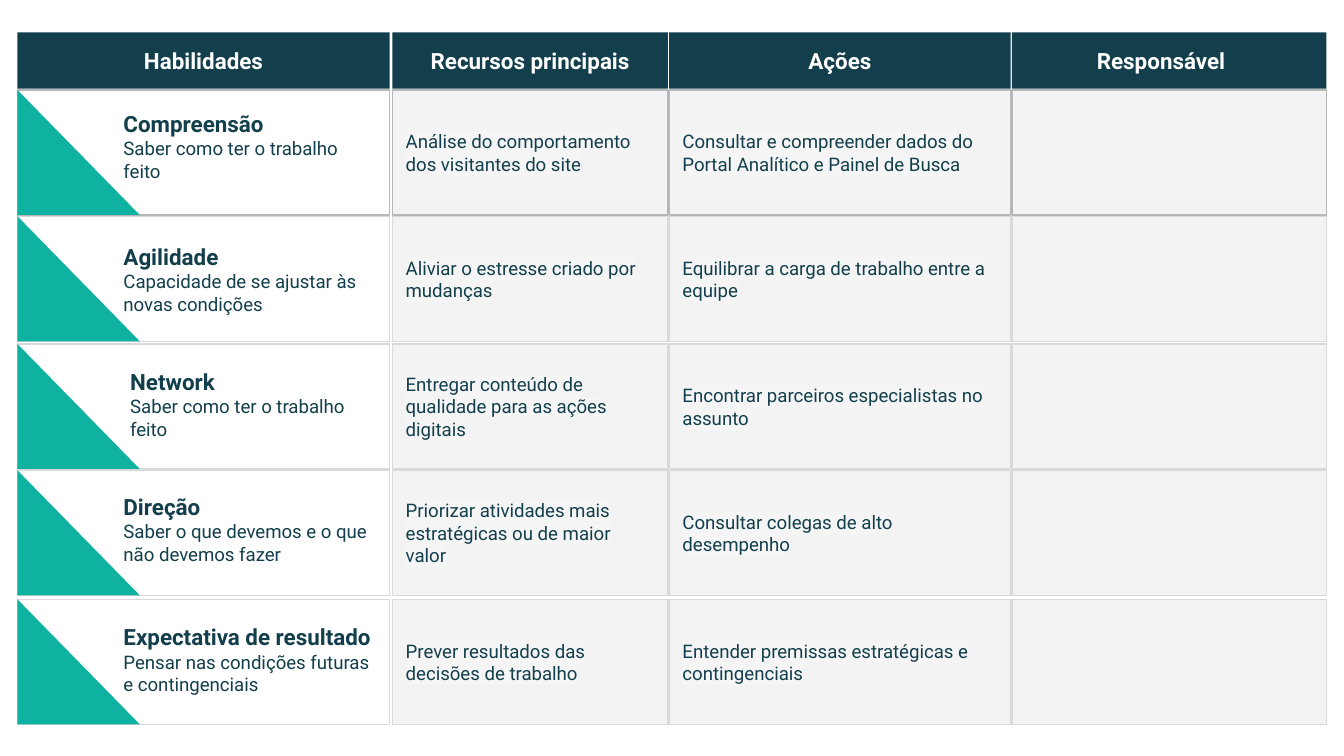
"""Build a skills matrix slide with resources, actions and owners."""
import pptx
import pptx.dml.color
import pptx.enum.shapes
import pptx.enum.text
import pptx.oxml.ns
import pptx.util
from lxml import etree

Inches = pptx.util.Inches
RGBColor = pptx.dml.color.RGBColor
SHAPES = pptx.enum.shapes.MSO_SHAPE
ALIGN = pptx.enum.text.PP_ALIGN
ANCHOR = pptx.enum.text.MSO_ANCHOR

COLORS = {"navy": "133F4C", "teal": "0FB1A0", "white": "FFFFFF", "cell": "F3F3F3",
          "highlight": "F5F5F5", "dark_line": "B7B7B7", "light_line": "D9D9D9"}
FORMATS = {
    "header": {"name": "Roboto", "size": pptx.util.Pt(12), "bold": True},
    "skill": {"name": "Roboto", "size": pptx.util.Pt(12), "bold": True},
    "body": {"name": "Roboto", "size": pptx.util.Pt(10), "bold": False},
}
FRAME = {"word_wrap": True, "margin_left": Inches(0.1), "margin_right": Inches(0.1),
         "margin_top": Inches(0.1), "margin_bottom": Inches(0.1)}
COLUMNS = [("Habilidades", 0.13, 2.77), ("Recursos principais", 2.92, 2.05),
           ("Ações", 4.98, 2.54), ("Responsável", 7.53, 2.34)]
ROW_HEIGHT = 0.93
ROWS = [
    (0.67, "dark_line", 0.82, 0.72, "Compreensão", "Saber como ter o trabalho feito",
     "Análise do comportamento dos visitantes do site",
     "Consultar e compreender dados do Portal Analítico e Painel de Busca"),
    (1.61, "light_line", 0.82, 1.71, "Agilidade", "Capacidade de se ajustar às novas condições",
     "Aliviar o estresse criado por mudanças",
     "Equilibrar a carga de trabalho entre a equipe"),
    (2.56, "light_line", 0.87, 2.64, "Network", "Saber como ter o trabalho feito",
     "Entregar conteúdo de qualidade para as ações digitais",
     "Encontrar parceiros especialistas no assunto"),
    (3.5, "light_line", 0.82, 3.57, "Direção", "Saber o que devemos e o que não devemos fazer",
     "Priorizar atividades mais estratégicas ou de maior valor",
     "Consultar colegas de alto desempenho"),
    (4.46, "light_line", 0.82, 4.54, "Expectativa de resultado",
     "Pensar nas condições futuras e contingenciais",
     "Prever resultados das decisões de trabalho",
     "Entender premissas estratégicas e contingenciais"),
]

presentation = pptx.Presentation()
presentation.slide_width = Inches(10)
presentation.slide_height = Inches(10) * 9 // 16
slide = presentation.slides.add_slide(presentation.slide_layouts[6])


def add_block(kind, left, top, width, height, fill, line=None):
    shape = slide.shapes.add_shape(kind, Inches(left), Inches(top), Inches(width), Inches(height))
    shape.shadow.inherit = False
    shape.fill.solid()
    shape.fill.fore_color.rgb = RGBColor.from_string(COLORS[fill])
    if line:
        shape.line.color.rgb = RGBColor.from_string(COLORS[line])
        shape.line.width = pptx.util.Pt(0.75)
    else:
        shape.line.fill.background()
    return shape


def write_text(shape, lines, color, align, anchor):
    frame = shape.text_frame
    for name, value in FRAME.items():
        setattr(frame, name, value)
    frame.vertical_anchor = anchor
    for index, (text, style) in enumerate(lines):
        paragraph = frame.add_paragraph() if index else frame.paragraphs[0]
        paragraph.alignment = align
        run = paragraph.add_run()
        run.text = text
        for name, value in FORMATS[style].items():
            setattr(run.font, name, value)
        run.font.color.rgb = RGBColor.from_string(COLORS[color])
    return run


for title, left, width in COLUMNS:
    header = add_block(SHAPES.RECTANGLE, left, 0.24, width, 0.42, "navy")
    write_text(header, [(title, "header")], "white", ALIGN.CENTER, ANCHOR.MIDDLE)
header.text_frame.margin_right = Inches(0.22)

for top, line, text_left, text_top, skill, description, resource, action in ROWS:
    for (title, left, width), text in zip(COLUMNS, ["", resource, action, ""]):
        fill = "white" if title == "Habilidades" else "cell"
        cell = add_block(SHAPES.RECTANGLE, left, top, width, ROW_HEIGHT, fill, line)
        if text:
            run = write_text(cell, [(text, "body")], "navy", ALIGN.LEFT, ANCHOR.MIDDLE)
            highlight = etree.Element(pptx.oxml.ns.qn("a:highlight"))
            etree.SubElement(highlight, pptx.oxml.ns.qn("a:srgbClr"), val=COLORS["highlight"])
            run.font._element.find(pptx.oxml.ns.qn("a:solidFill")).addnext(highlight)
    add_block(SHAPES.RIGHT_TRIANGLE, COLUMNS[0][1], top, 0.91, ROW_HEIGHT, "teal")
    label = slide.shapes.add_textbox(Inches(text_left), Inches(text_top),
                                     Inches(2.05), Inches(ROW_HEIGHT))
    write_text(label, [(skill, "skill"), (description, "body")], "navy", ALIGN.LEFT, ANCHOR.TOP)

presentation.save("out.pptx")
